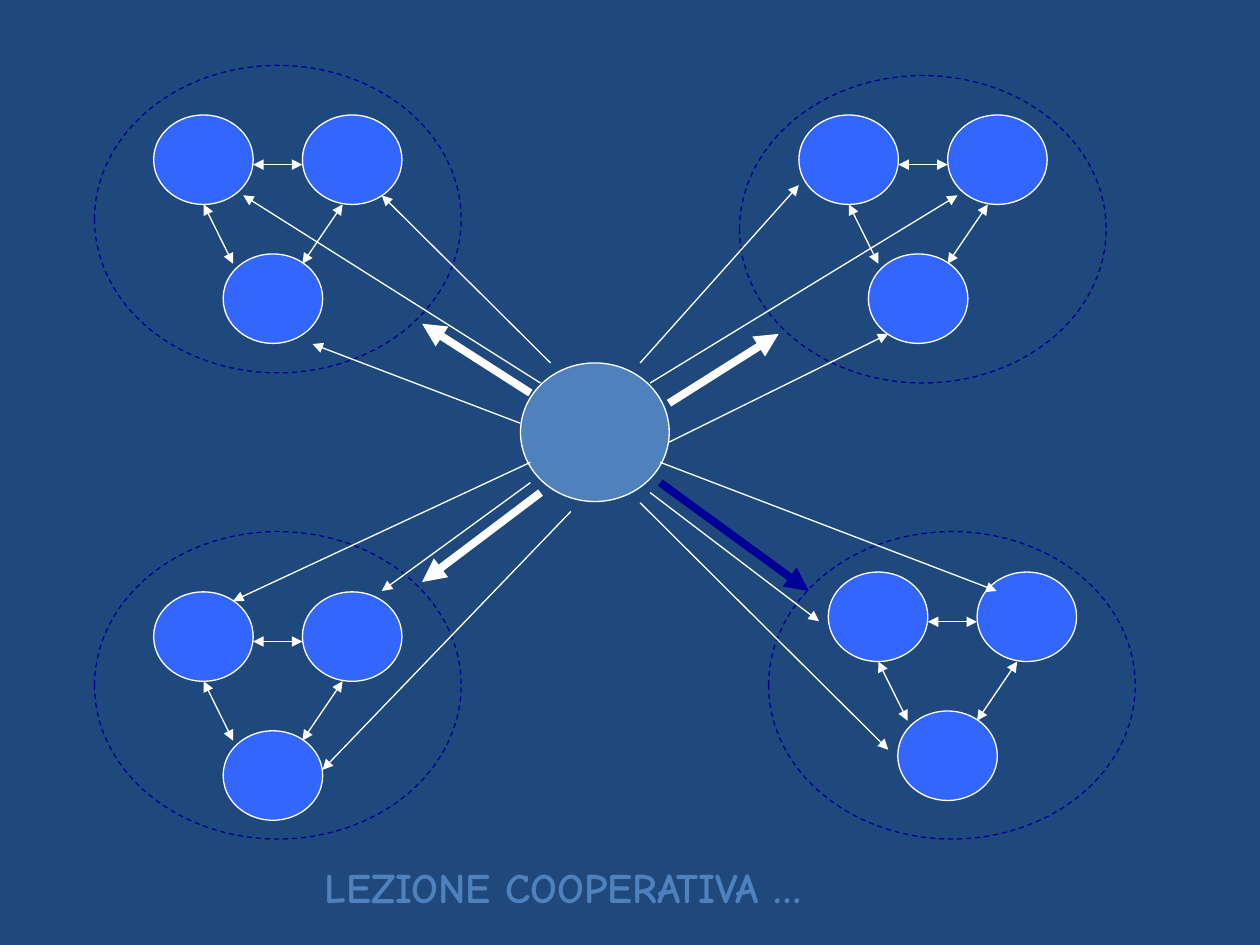
from lxml.etree import SubElement
from pptx import Presentation
from pptx.dml.color import RGBColor
from pptx.enum.dml import MSO_LINE
from pptx.enum.shapes import MSO_CONNECTOR, MSO_SHAPE
from pptx.enum.text import MSO_AUTO_SIZE
from pptx.oxml.ns import qn
from pptx.util import Pt

COLORS = {
    "background": "1F497D",
    "teacher": "4F81BD",
    "student": "3366FF",
    "navy": "000099",
    "white": "FFFFFF",
}
TITLE = "LEZIONE COOPERATIVA …"
TITLE_BOX = (178.6, 488.9, 436.3, 36)
TEACHER_BOX = (297.4, 207.4, 85, 79.2)

GROUP_SIZE = (209.5, 175.7)
GROUP_CORNERS = [(54, 37.4), (54, 303.8), (439.2, 303.8), (422.6, 43.2)]

# Start x, start y, end x, end y, colour
GROUP_ARROWS = [
    (303.1, 224.6, 241.2, 185, "white"),
    (382.3, 230.4, 445, 190.8, "white"),
    (377.3, 275.8, 462.2, 337.7, "navy"),
    (308.9, 281.5, 241.2, 332.6, "white"),
]

TRIO_CORNERS = [(87.8, 338.2), (87.8, 65.7), (456.5, 65.7), (473.3, 326.9)]
# Offsets from the corner of each trio
STUDENT_SIZE = (56.9, 51.1)
STUDENT_OFFSETS = [(0, 0), (85, 0), (39.7, 79.4)]
STUDENT_LINKS = [
    (28.6, 51.1, 45.4, 85),
    (56.9, 28.4, 85, 28.4),
    (108, 51.1, 85, 85),
]

STUDENT_ARROWS = [
    (314.6, 207.4, 218.2, 111.6),
    (297.4, 241.9, 178.6, 196.6),
    (308.9, 218.9, 139, 111.6),
    (365.8, 207.4, 456.5, 105.8),
    (382.3, 252.7, 507.6, 190.8),
    (371.5, 218.9, 547.2, 111.6),
    (377.3, 264.2, 569.5, 337.7),
    (365.8, 287.3, 507.6, 428.4),
    (371.5, 281.5, 468, 355),
    (303.1, 264.2, 133.2, 343.4),
    (326.2, 292.3, 184.3, 439.9),
    (303.1, 275.8, 218.2, 337.7),
]


def color(name):
    return RGBColor.from_string(COLORS[name])


def add_ellipse(shapes, box, fill=None, line="white", dash=None):
    shape = shapes.add_shape(MSO_SHAPE.OVAL, *map(Pt, box))
    shape.shadow.inherit = False
    if fill:
        shape.fill.solid()
        shape.fill.fore_color.rgb = color(fill)
    else:
        shape.fill.background()
    shape.line.color.rgb = color(line)
    shape.line.width = Pt(0.75)
    if dash:
        shape.line.dash_style = dash


def add_arrow(shapes, points, line="white", width=0.75, ends=("tailEnd",)):
    connector = shapes.add_connector(MSO_CONNECTOR.STRAIGHT, *map(Pt, points))
    connector.line.color.rgb = color(line)
    connector.line.width = Pt(width)
    properties = connector._element.spPr
    outline = properties.find(qn("a:ln"))
    for end in ends:
        SubElement(outline, qn(f"a:{end}"), type="triangle")
    SubElement(properties, qn("a:effectLst"))


def add_text(shapes, text, box, *, size, font, fill, bold=False):
    text_box = shapes.add_textbox(*map(Pt, box))
    frame = text_box.text_frame
    frame.word_wrap = True
    frame.auto_size = MSO_AUTO_SIZE.SHAPE_TO_FIT_TEXT
    run = frame.paragraphs[0].add_run()
    run.text = text
    run.font.size = Pt(size)
    run.font.name = font
    run.font.bold = bold
    run.font.color.rgb = color(fill)


def add_trio(shapes, left, top):
    """Three students, each linked both ways with the other two."""
    trio = shapes.add_group_shape().shapes
    for x, y in STUDENT_OFFSETS:
        add_ellipse(trio, (left + x, top + y, *STUDENT_SIZE), fill="student")
    for x1, y1, x2, y2 in STUDENT_LINKS:
        points = (left + x1, top + y1, left + x2, top + y2)
        add_arrow(trio, points, ends=("headEnd", "tailEnd"))


def main():
    presentation = Presentation()
    presentation.slide_width, presentation.slide_height = Pt(720), Pt(540)
    slide = presentation.slides.add_slide(presentation.slide_layouts[6])
    slide.background.fill.solid()
    slide.background.fill.fore_color.rgb = color("background")
    shapes = slide.shapes

    add_ellipse(shapes, TEACHER_BOX, fill="teacher")
    for corner in GROUP_CORNERS:
        add_ellipse(shapes, (*corner, *GROUP_SIZE), line="navy", dash=MSO_LINE.DASH)
    for *points, line in GROUP_ARROWS:
        add_arrow(shapes, points, line=line, width=4.5)
    for corner in TRIO_CORNERS:
        add_trio(shapes, *corner)
    add_text(shapes, TITLE, TITLE_BOX, size=24, font="Comic Neue",
             fill="teacher", bold=True)
    for points in STUDENT_ARROWS:
        add_arrow(shapes, points)

    presentation.save("out.pptx")


if __name__ == "__main__":
    main()
